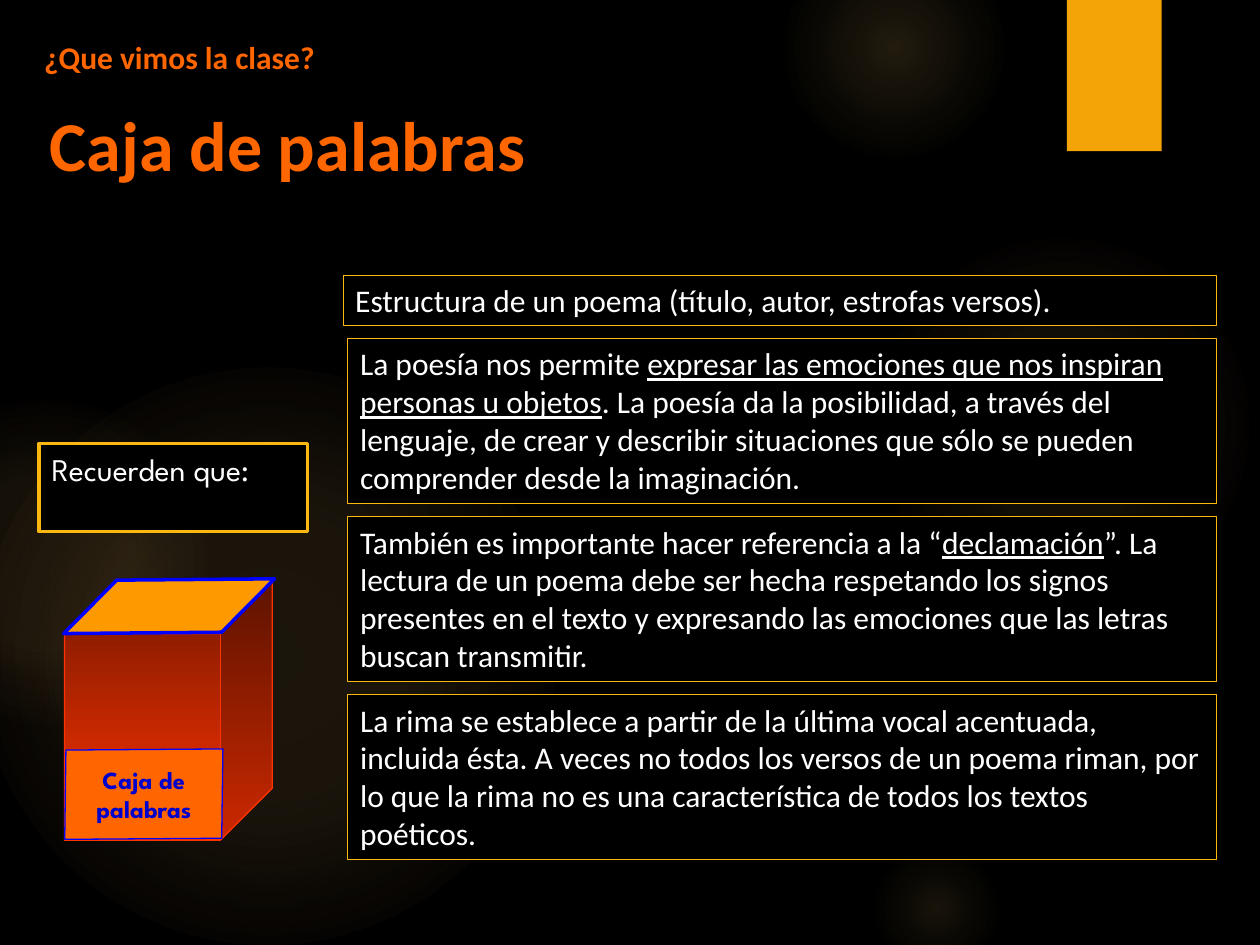
from lxml import etree
from pptx import Presentation
from pptx import util as u
from pptx.dml.color import RGBColor
from pptx.enum import shapes, text
from pptx.oxml.ns import qn

COLORS = {
    "background": "000000", "glow": "FAC96A", "bookmark": "F5A408",
    "heading": "FF6600", "body": "FFFFFF", "frame": "FCB811",
    "cube_dark": "761800", "cube_bright": "FF3300",
    "label": "FF6600", "label_text": "0000CC", "lid": "FF9900", "edge": "0000FF",
}
BODY_FONT, DISPLAY_FONT = "Calibri", "League Spartan"

# Text: (wording, underlined) runs for each note
HEADING = "¿Que vimos la clase?"
TITLE = "Caja de palabras"
REMINDER = "Recuerden que:"
LABEL = ["Caja de", "palabras"]
NOTES = [
    [("Estructura de un poema (título, autor, estrofas versos).", False)],
    [("La poesía nos permite ", False),
     ("expresar las emociones que nos inspiran personas u objetos", True),
     (". La poesía da la posibilidad, a través del lenguaje, de crear y describir "
      "situaciones que sólo se pueden comprender desde la imaginación.", False)],
    [("También es importante hacer referencia a la “", False),
     ("declamación", True),
     ("”. La lectura de un poema debe ser hecha respetando los signos presentes en "
      "el texto y expresando las emociones que las letras buscan transmitir.", False)],
    [("La rima se establece a partir de la última vocal acentuada, incluida ésta. "
      "A veces no todos los versos de un poema riman, por lo que la rima no es una "
      "característica de todos los textos poéticos.", False)],
]

# Background glows: left, top, diameter in cm, then (position %, opacity %) stops
GLOWS = [
    (17.5, 4.65, 7.82, [(0, 7), (36, 6), (69, 0)]),
    (15.8, -1.27, 4.45, [(0, 14), (36, 7), (73, 0)]),
    (17.5, 16.94, 2.74, [(0, 10), (31, 5), (66, 0)]),
    (-0.43, 7.42, 11.63, [(0, 11), (36, 10), (75, 0)]),
    (-2.34, 8.05, 6.55, [(0, 8), (36, 8), (72, 0)]),
]

# Note layout in cm
NOTES_RIGHT, NOTES_TOP, NOTES_GAP = 24.51, 5.54, 0.26
FIRST_NOTE = (6.91, 1.02)  # left, height
LONG_NOTE = (7.01, 3.33)


def rgb(name):
    return RGBColor.from_string(COLORS[name])


def cm(box):
    return [u.Cm(length) for length in box]


def add_block(slide, kind, box, fill=None, line=None, width=0.75):
    block = slide.shapes.add_shape(kind, *cm(box))
    block.shadow.inherit = False
    if fill:
        block.fill.solid()
        block.fill.fore_color.rgb = rgb(fill)
    if line:
        block.line.color.rgb = rgb(line)
        block.line.width = u.Pt(width)
    else:
        block.line.fill.background()
    return block


def set_gradient(block, stops, angle=None):
    """Stops are (position %, colour name, opacity %); no angle means radial."""
    gradient = etree.Element(qn("a:gradFill"), rotWithShape="1")
    stop_list = etree.SubElement(gradient, qn("a:gsLst"))
    for position, name, opacity in stops:
        stop = etree.SubElement(stop_list, qn("a:gs"), pos=str(position * 1000))
        color = etree.SubElement(stop, qn("a:srgbClr"), val=COLORS[name])
        etree.SubElement(color, qn("a:alpha"), val=str(opacity * 1000))
    if angle is None:
        path = etree.SubElement(gradient, qn("a:path"), path="circle")
        etree.SubElement(path, qn("a:fillToRect"),
                         {side: "50000" for side in "ltrb"})
    else:
        etree.SubElement(gradient, qn("a:lin"), ang=str(angle * 60000), scaled="1")
    block._element.spPr.find(qn("a:prstGeom")).addnext(gradient)


def write(block, paragraphs, size, color, font=BODY_FONT, bold=False,
          align=text.PP_ALIGN.LEFT, anchor=text.MSO_ANCHOR.TOP, wrap=True):
    frame = block.text_frame
    frame.word_wrap = wrap
    frame.vertical_anchor = anchor
    for index, runs in enumerate(paragraphs):
        paragraph = frame.add_paragraph() if index else frame.paragraphs[0]
        paragraph.alignment = align
        paragraph.font.name = font
        paragraph.font.size = u.Pt(size)
        paragraph.font.bold = bold
        paragraph.font.color.rgb = rgb(color)
        for wording, underlined in runs:
            run = paragraph.add_run()
            run.text = wording
            if underlined:
                run.font.underline = True


def main():
    deck = Presentation()
    deck.slide_width, deck.slide_height = cm((25.4, 19.05))
    slide = deck.slides.add_slide(deck.slide_layouts[6])
    kinds = shapes.MSO_SHAPE

    # Background
    slide.background.fill.solid()
    slide.background.fill.fore_color.rgb = rgb("background")
    for left, top, diameter, stops in GLOWS:
        glow = add_block(slide, kinds.OVAL, (left, top, diameter, diameter))
        set_gradient(glow, [(position, "glow", opacity) for position, opacity in stops])
    add_block(slide, kinds.RECTANGLE, (21.51, 0, 1.91, 3.05), "bookmark")

    # Headings
    heading = slide.shapes.add_textbox(*cm((0.64, 0.64, 18.21, 1.02)))
    write(heading, [[(HEADING, False)]], 18, "heading", bold=True)
    title = slide.shapes.add_textbox(*cm((0.69, 1.93, 10.21, 1.96)))
    write(title, [[(TITLE, False)]], 40, "heading", bold=True,
          align=text.PP_ALIGN.CENTER)

    # Word box: cube, label and lid
    cube = add_block(slide, kinds.CUBE, (1.3, 11.73, 4.19, 5.21), line="cube_bright")
    set_gradient(cube, [(0, "cube_dark", 100), (100, "cube_bright", 100)], angle=90)

    label = add_block(slide, kinds.PARALLELOGRAM, (1.3, 15.11, 3.2, 1.8), "label", "edge")
    label.adjustments[0] = 0.02
    label.rotation = -0.4
    write(label, [[(line, False)] for line in LABEL], 14, "label_text", DISPLAY_FONT,
          bold=True, align=text.PP_ALIGN.CENTER, anchor=text.MSO_ANCHOR.MIDDLE, wrap=False)

    lid = add_block(slide, kinds.PARALLELOGRAM, (1.52, 11.1, 3.78, 2.24), "lid", "edge", 2)
    lid.adjustments[0] = 1.01
    lid.rotation = 134.8
    lid._element.spPr.find(qn("a:xfrm")).set("flipH", "1")

    # Reminder
    reminder = add_block(slide, kinds.RECTANGLE, (0.79, 8.94, 5.41, 1.78),
                         "background", "frame", 2)
    write(reminder, [[(REMINDER, False)]], 18, "body", DISPLAY_FONT)

    # Notes, stacked with equal gaps and a common right edge
    top = NOTES_TOP
    for index, runs in enumerate(NOTES):
        left, height = LONG_NOTE if index else FIRST_NOTE
        note = add_block(slide, kinds.RECTANGLE, (left, top, NOTES_RIGHT - left, height),
                         "background", "frame", 0.25)
        write(note, [runs], 18, "body")
        top += height + NOTES_GAP

    deck.save("out.pptx")


if __name__ == "__main__":
    main()
